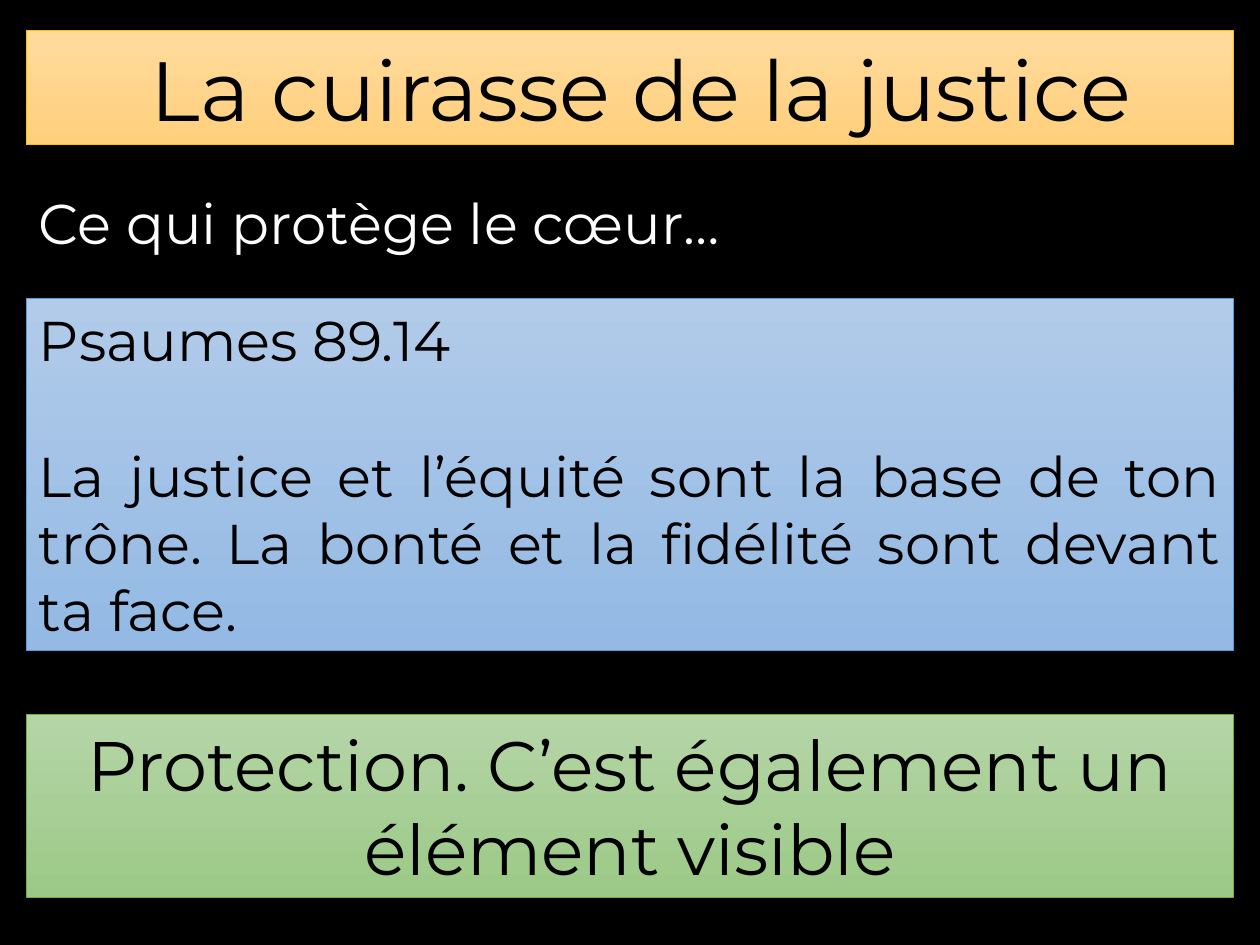
"""Build the slide on the breastplate of righteousness."""
import pptx
import pptx.util
import pptx.dml.color
import pptx.enum.shapes
import pptx.enum.text

ALIGN = pptx.enum.text.PP_ALIGN
THEME = {
    "font": "Montserrat", "back": "000000", "dark": "000000", "light": "FFFFFF",
    "gold": ("FFDB9E", "FFD07C", "FFC000"),
    "blue": ("B1CBE9", "93B9E4", "5B9BD5"),
    "green": ("B5D5A7", "9CC987", "70AD47"),
    "head": 48, "body": 32, "close": 40, "gap": 39, "line": 0.5,
}
LEFT, WIDE = 0.21, 9.58
BANDS = [
    {"kind": "title", "top": 0.24, "high": 0.91, "hue": "gold", "size": "head",
     "align": ALIGN.CENTER, "text": [" La cuirasse de la justice"]},
    {"kind": "text", "top": 1.44, "high": 0.64, "hue": None, "size": "body",
     "align": ALIGN.JUSTIFY, "text": ["Ce qui protège le cœur…"]},
    {"kind": "box", "top": 2.37, "high": 2.79, "hue": "blue", "size": "body",
     "align": ALIGN.JUSTIFY, "text": [
         "Psaumes 89.14",
         "La justice et l’équité sont la base de ton trône. "
         "La bonté et la fidélité sont devant ta face."]},
    {"kind": "box", "top": 5.67, "high": 1.45, "hue": "green", "size": "close",
     "align": ALIGN.CENTER,
     "text": ["Protection. C’est également un élément visible"]},
]


def tint(code):
    return pptx.dml.color.RGBColor.from_string(code)


def write(shape, lines, size, color, align):
    frame = shape.text_frame
    frame.word_wrap = True
    frame.auto_size = pptx.enum.text.MSO_AUTO_SIZE.SHAPE_TO_FIT_TEXT
    frame.vertical_anchor = pptx.enum.text.MSO_ANCHOR.MIDDLE
    for num, line in enumerate(lines):
        para = frame.add_paragraph() if num else frame.paragraphs[0]
        para.alignment = align
        para.space_before = pptx.util.Pt(THEME["gap"] if num else 0)
        run = para.add_run()
        run.text = line
        run.font.name = THEME["font"]
        run.font.size = pptx.util.Pt(size)
        run.font.color.rgb = tint(color)


def paint(shape, hue):
    *shades, edge = THEME[hue]
    shape.fill.gradient()
    shape.fill.gradient_angle = 270
    for stop, shade in zip(shape.fill.gradient_stops, shades):
        stop.color.rgb = tint(shade)
    shape.line.color.rgb = tint(edge)
    shape.line.width = pptx.util.Pt(THEME["line"])
    shape.shadow.inherit = False


def place(slide, band):
    area = [pptx.util.Inches(n) for n in (LEFT, band["top"], WIDE, band["high"])]
    if band["kind"] == "title":
        shape = slide.shapes.title
        shape.left, shape.top, shape.width, shape.height = area
    elif band["kind"] == "text":
        shape = slide.shapes.add_textbox(*area)
    else:
        shape = slide.shapes.add_shape(pptx.enum.shapes.MSO_SHAPE.RECTANGLE, *area)
    if band["hue"]:
        paint(shape, band["hue"])
    color = THEME["dark" if band["hue"] else "light"]
    write(shape, band["text"], size=THEME[band["size"]], color=color,
          align=band["align"])


def main():
    deck = pptx.Presentation()
    deck.slide_width = pptx.util.Inches(10)
    deck.slide_height = pptx.util.Inches(7.5)
    slide = deck.slides.add_slide(deck.slide_layouts[5])
    slide.background.fill.solid()
    slide.background.fill.fore_color.rgb = tint(THEME["back"])
    for band in BANDS:
        place(slide, band)
    deck.save("out.pptx")


if __name__ == "__main__":
    main()
